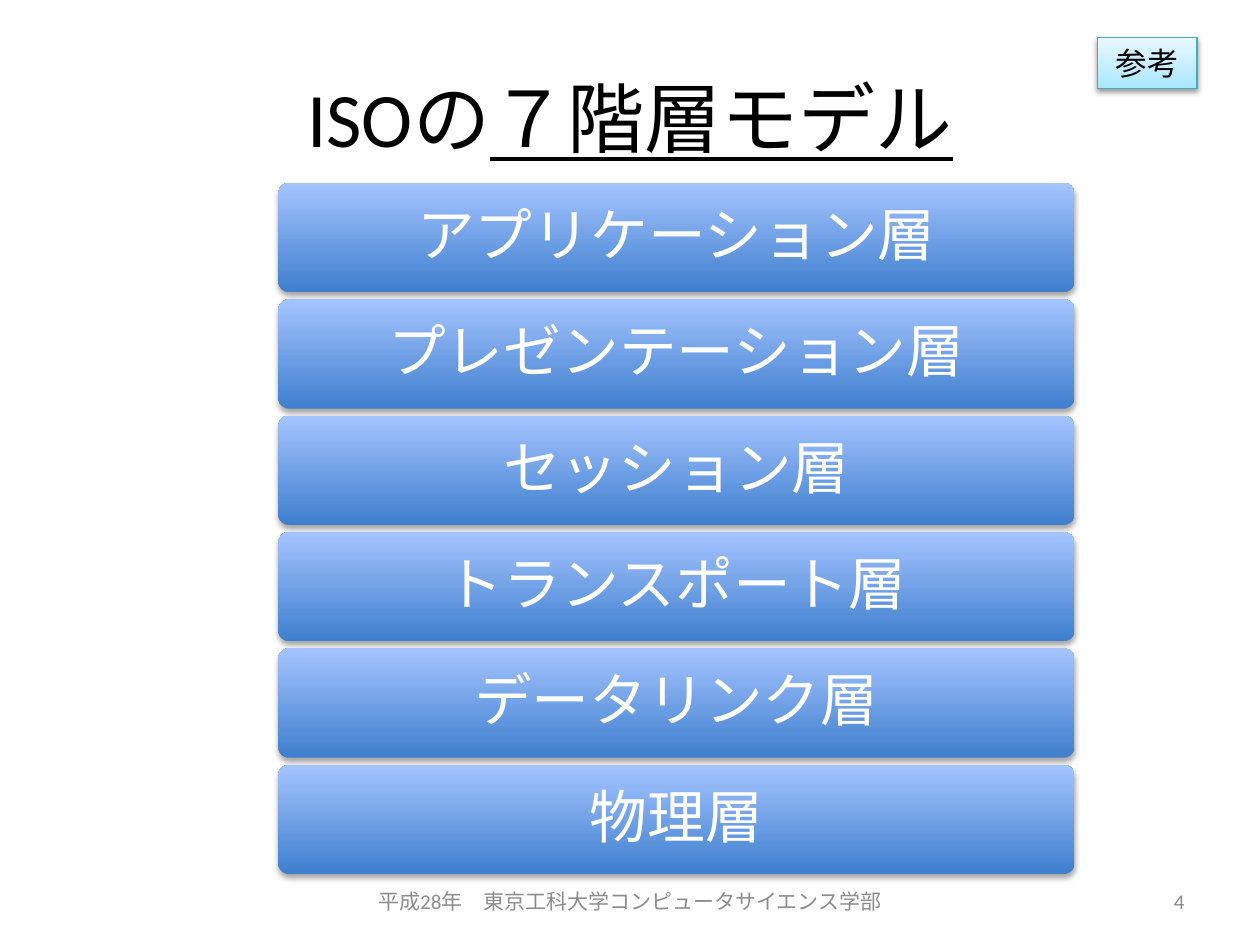
from pptx import Presentation
from pptx.dml.color import RGBColor
from pptx.enum.lang import MSO_LANGUAGE_ID
from pptx.enum.shapes import MSO_SHAPE
from pptx.enum.text import MSO_ANCHOR, PP_ALIGN
from pptx.oxml import parse_xml
from pptx.oxml.ns import nsdecls, qn
from pptx.util import Pt

LAYERS = ["アプリケーション層", "プレゼンテーション層", "セッション層",
          "トランスポート層", "データリンク層", "物理層"]
LAYER_STOPS = [(0, "3F7FCE"), (100, "A4C4FF")]
BADGE_STOPS = [(0, "A7E6FF"), (35, "C1EDFF"), (100, "E7F8FF")]


def color(value):
    return RGBColor.from_string(value)


def write_text(shape, parts, size, text_color, align=PP_ALIGN.CENTER,
               anchor=MSO_ANCHOR.MIDDLE):
    """Fill the shape with one paragraph, one run for each part."""
    text_frame = shape.text_frame
    text_frame.word_wrap = True
    text_frame.vertical_anchor = anchor
    paragraph = text_frame.paragraphs[0]
    paragraph.alignment = align
    for part in parts:
        run = paragraph.add_run()
        run.text = part
        run.font.name = "Calibri"
        run.font.size = Pt(size)
        run.font.color.rgb = color(text_color)
        run.font.language_id = MSO_LANGUAGE_ID.JAPANESE
    return paragraph


def add_text(slide, box, parts, size, text_color, align=PP_ALIGN.CENTER):
    shape = slide.shapes.add_textbox(*map(Pt, box))
    return write_text(shape, parts, size, text_color, align)


def add_gradient_shape(slide, kind, box, stops, shadow_distance, shadow_alpha):
    """Add a shape with an upward gradient and a soft shadow below it."""
    shape = slide.shapes.add_shape(kind, *map(Pt, box))
    properties = shape._element.spPr
    stop_list = "".join(
        f'<a:gs pos="{position * 1000}"><a:srgbClr val="{value}"/></a:gs>'
        for position, value in stops)
    properties.find(qn("a:prstGeom")).addnext(parse_xml(
        f'<a:gradFill {nsdecls("a")} rotWithShape="1"><a:gsLst>{stop_list}</a:gsLst>'
        '<a:lin ang="16200000" scaled="0"/></a:gradFill>'))
    shape.line.fill.background()
    shape.shadow.inherit = False
    properties.find(qn("a:effectLst")).append(parse_xml(
        f'<a:outerShdw {nsdecls("a")} blurRad="{Pt(3.1)}" dist="{Pt(shadow_distance)}" '
        'dir="5400000" rotWithShape="0"><a:srgbClr val="000000">'
        f'<a:alpha val="{shadow_alpha * 1000}"/></a:srgbClr></a:outerShdw>'))
    return shape


def add_title(slide, box):
    paragraph = add_text(slide, box, ["ISOの", "７階層モデル"], 44, "000000")
    paragraph.runs[1].font.underline = True


def add_layer_stack(slide, box, gap):
    left, top, width, height = box
    layer_height = (height - gap * (len(LAYERS) - 1)) / len(LAYERS)
    for index, name in enumerate(LAYERS):
        layer_top = top + index * (layer_height + gap)
        shape = add_gradient_shape(
            slide, MSO_SHAPE.ROUNDED_RECTANGLE,
            (left, layer_top, width, layer_height), LAYER_STOPS, 1.8, 35)
        shape.adjustments[0] = 0.1
        paragraph = write_text(shape, [name], 33, "FFFFFF")
        paragraph.line_spacing = 0.9


def add_badge(slide, box):
    shape = add_gradient_shape(slide, MSO_SHAPE.RECTANGLE, box, BADGE_STOPS, 1.6, 38)
    shape.line.color.rgb = color("46AAC5")
    shape.line.width = Pt(0.75)
    write_text(shape, ["参考"], 18, "000000", anchor=MSO_ANCHOR.TOP)


def add_footer(slide, box):
    left, top, width, height = box
    number_width = 168
    add_text(slide, (left, top, width - number_width, height),
             ["平成28年　東京工科大学コンピュータサイエンス学部"], 12, "8C8C8C")
    add_text(slide, (left + width - number_width, top, number_width, height),
             ["4"], 12, "8C8C8C", PP_ALIGN.RIGHT)


def main():
    presentation = Presentation()
    presentation.slide_width = Pt(720)
    presentation.slide_height = Pt(540)
    slide = presentation.slides.add_slide(presentation.slide_layouts[6])
    add_title(slide, (36, 21.6, 648, 90))
    add_layer_stack(slide, (159, 104.5, 455, 395), 4)
    add_footer(slide, (204, 500.5, 480, 28.75))
    add_badge(slide, (627, 21.6, 57, 29))
    presentation.save("out.pptx")


if __name__ == "__main__":
    main()
